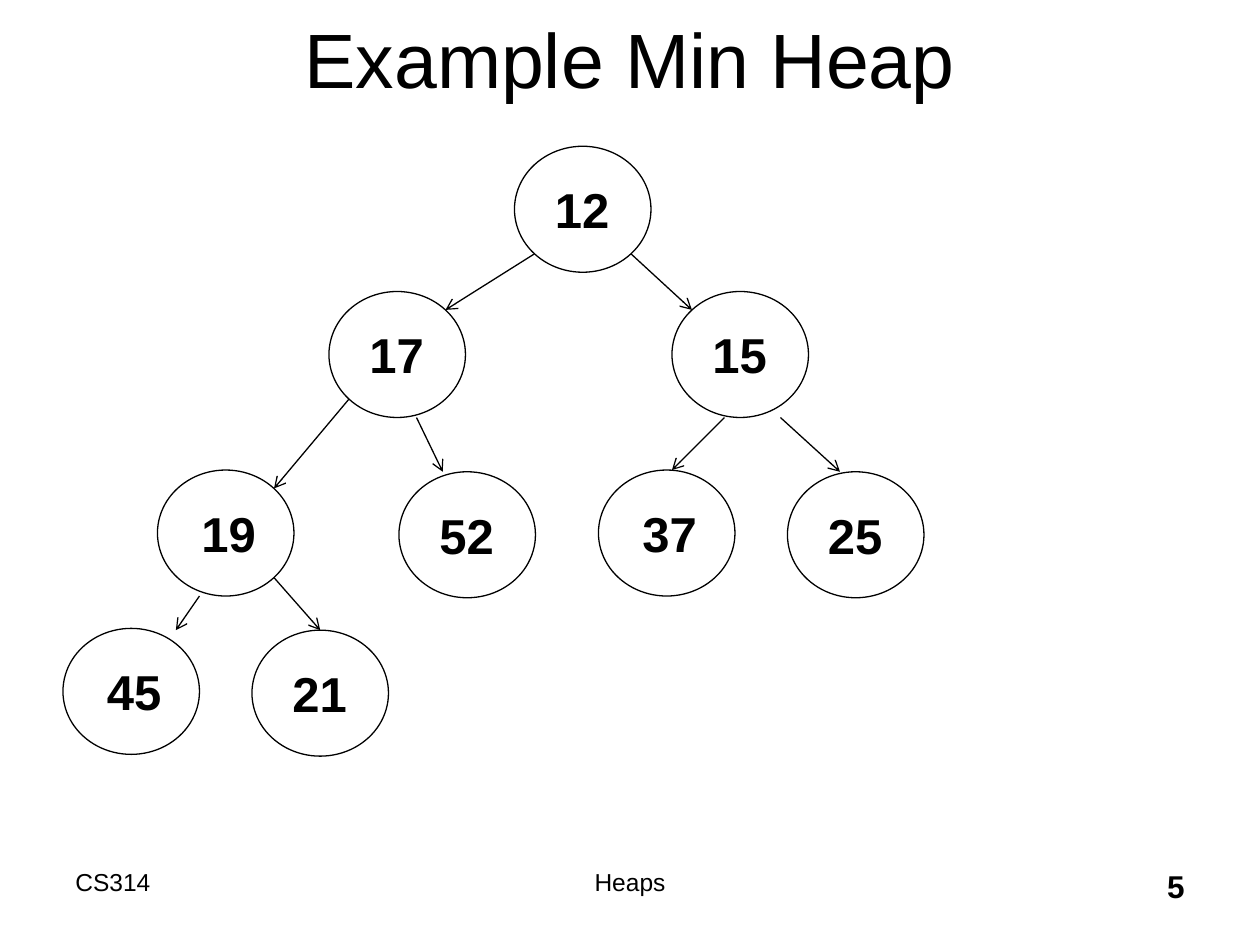
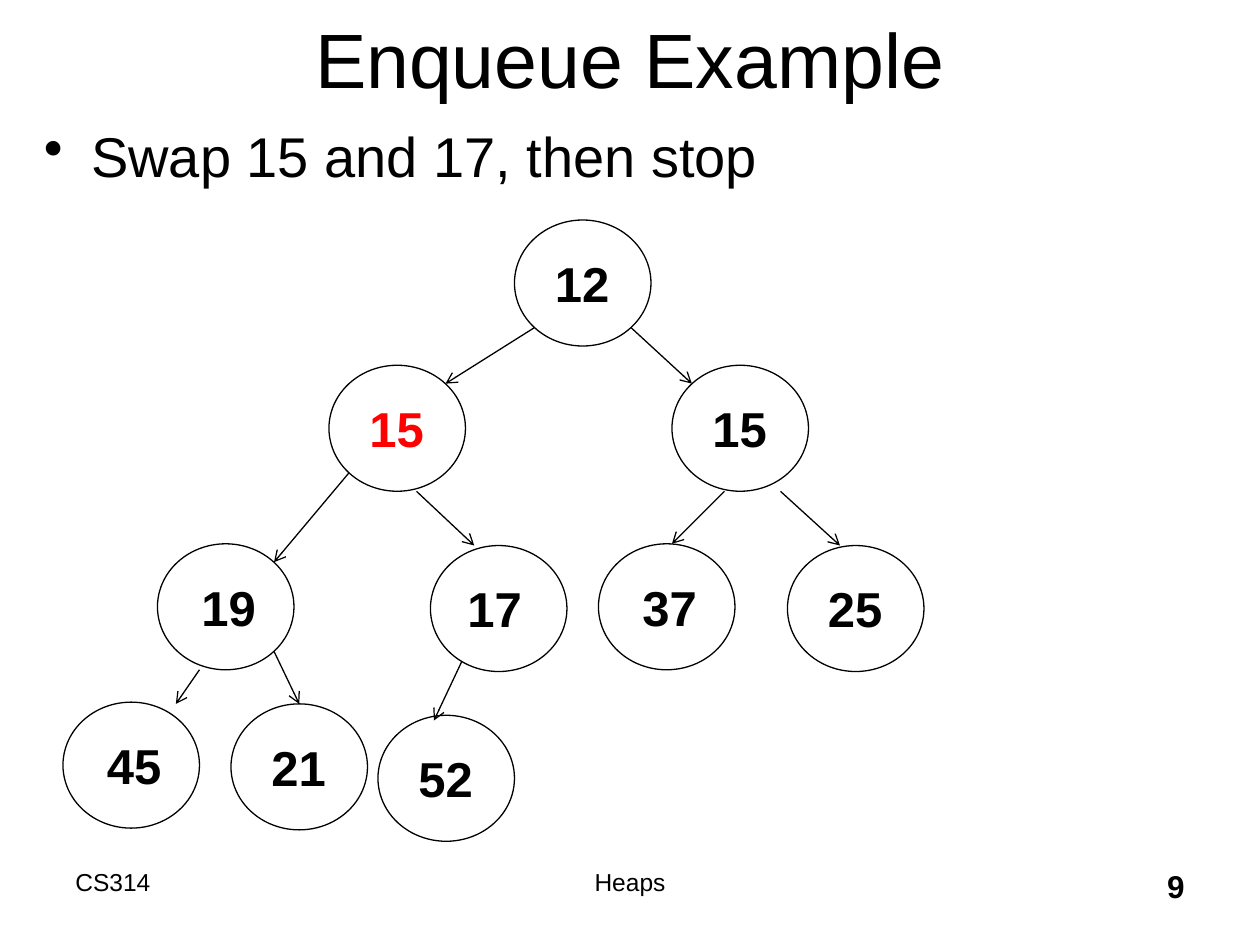
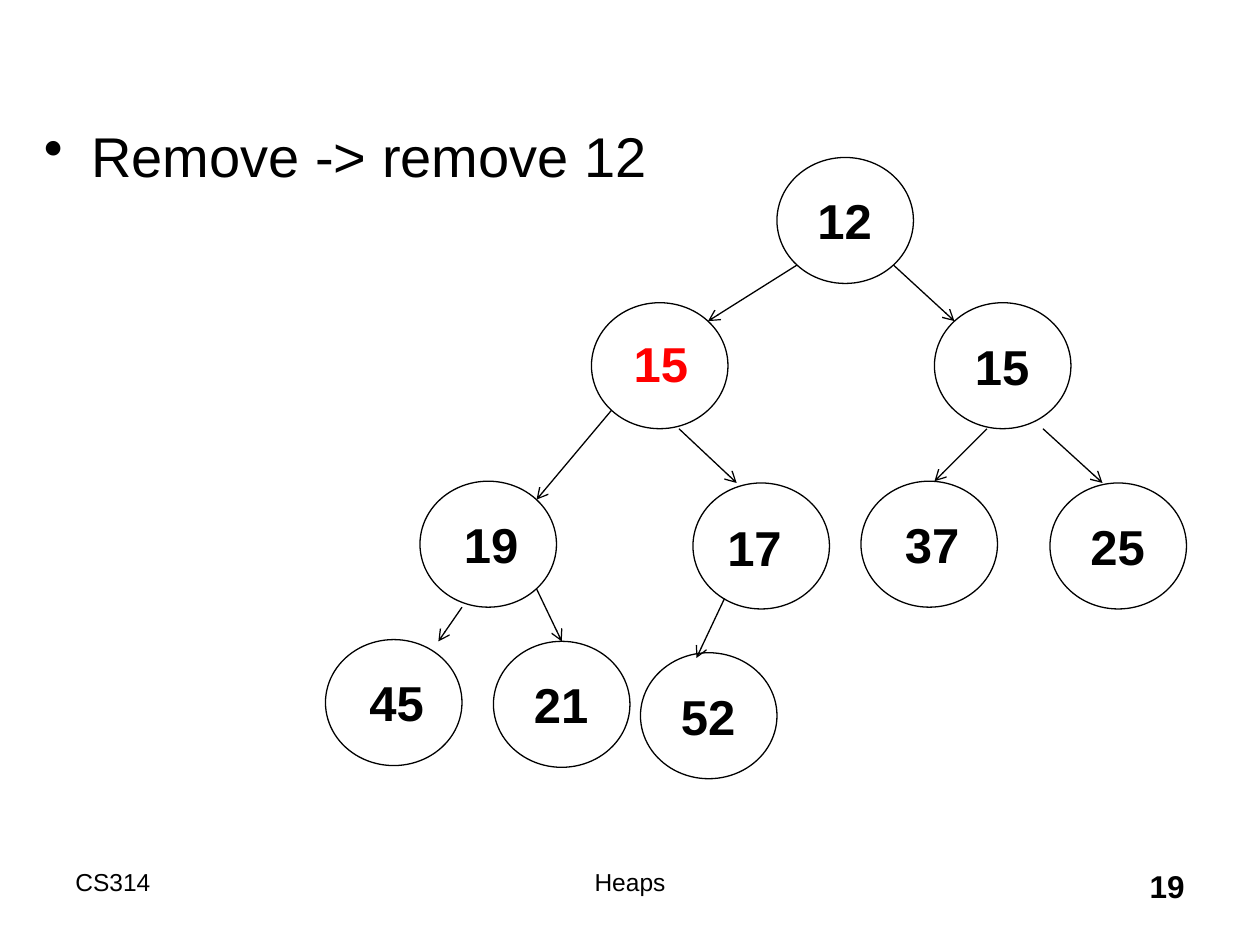
"""Build three slides that show a min heap, an enqueue and a removal."""
from dataclasses import dataclass

from lxml import etree
from pptx import Presentation
from pptx.dml.color import RGBColor
from pptx.enum.shapes import MSO_CONNECTOR, MSO_SHAPE
from pptx.enum.text import MSO_ANCHOR, PP_ALIGN
from pptx.oxml.ns import qn
from pptx.util import Pt

LEFT, MID, RIGHT = PP_ALIGN.LEFT, PP_ALIGN.CENTER, PP_ALIGN.RIGHT
TOP, CENTER = MSO_ANCHOR.TOP, MSO_ANCHOR.MIDDLE
OVAL, LINE = MSO_SHAPE.OVAL, MSO_CONNECTOR.STRAIGHT


@dataclass(frozen=True)
class Theme:
    font: str = "Arial"
    ink: RGBColor = RGBColor(0, 0, 0)
    mark: RGBColor = RGBColor(255, 0, 0)
    title: int = 44
    body: int = 32
    node: int = 28
    page: int = 18
    foot: int = 14
    rule: float = 0.75


theme = Theme()


def add_text(slide, text, area, size, align=LEFT, bold=False, color=theme.ink,
             anchor=TOP, wrap=True, before=0):
    box = slide.shapes.add_textbox(*map(Pt, area))
    frame = box.text_frame
    frame.word_wrap = wrap
    frame.vertical_anchor = anchor
    para = frame.paragraphs[0]
    para.text = text
    para.alignment = align
    para.space_before = Pt(before)
    para.font.name = theme.font
    para.font.size = Pt(size)
    para.font.bold = bold
    para.font.color.rgb = color
    return box


def add_edge(slide, start, end):
    edge = slide.shapes.add_connector(LINE, *map(Pt, start + end))
    edge.line.color.rgb = theme.ink
    edge.line.width = Pt(theme.rule)
    props = edge.element.spPr
    etree.SubElement(props.find(qn("a:ln")), qn("a:tailEnd"), type="arrow")
    etree.SubElement(props, qn("a:effectLst"))


WIDE, HIGH = 78, 72
LOW_L, LOW_R = (11.4, 61.5), (66.6, 61.5)
TOP_L, TOP_R = (11.4, 10.5), (66.6, 10.5)

small = [(0, 0), (-106, 83), (90, 83), (-204, 185), (-66, 186),
         (48, 185), (156, 186), (-258, 275.5), (-150, 276.5)]
large = small[:4] + [(-48, 186)] + small[5:8] + [(-162, 276.5), (-78, 283)]

ports = [(LOW_L, TOP_R), (LOW_R, TOP_L), (LOW_L, TOP_R),
         ((50, 72), (25, 0)), ((30, 72), (42, 0)), ((62, 72), (30, 0)),
         ((24, 72), (64.5, 1)), (LOW_R, (39, 0)), ((18, 66), (32, 3))]

inset = (16, 15.5)
shift = {3: (18, 15.5), 5: (18, 15.5), 7: (18, 15.5)}

start_heap = [12, 17, 15, 19, 52, 37, 25, 45, 21]
final_heap = [12, 15, 15, 19, 17, 37, 25, 45, 21, 52]

pages = [
    dict(title="Example Min Heap", body="", page=5, root=(294, 83.6),
         heap=start_heap, spots=small, red=None, shift=shift),
    dict(title="Enqueue Example", body="Swap 15 and 17, then stop", page=9,
         root=(294, 125.75), heap=final_heap, spots=large, red=1,
         shift={**shift, 4: (14, 15.5)}),
    dict(title="", body="Remove -> remove 12", page=19, root=(444, 90),
         heap=final_heap, spots=large, red=1,
         shift={**shift, 1: (17, 14), 4: (12.5, 16)}),
]

deck = Presentation()
deck.slide_width, deck.slide_height = Pt(720), Pt(540)

for page in pages:
    slide = deck.slides.add_slide(deck.slide_layouts[6])
    if page["title"]:
        add_text(slide, page["title"], (54, -12, 612, 90), theme.title, MID,
                 anchor=CENTER)
    if page["body"]:
        box = add_text(slide, page["body"], (18, 66, 684, 432), theme.body,
                       before=3.2)
        props = box.element.find(".//" + qn("a:pPr"))
        props.set("marL", str(Pt(27)))
        props.set("indent", str(Pt(-27)))
        bullet = etree.Element(qn("a:buChar"), char="•")
        props.find(qn("a:defRPr")).addprevious(bullet)
    add_text(slide, "CS314", (36, 492, 180, 36), theme.foot)
    add_text(slide, "Heaps", (222, 492, 276, 36), theme.foot, MID)
    add_text(slide, str(page["page"]), (534, 492, 150, 36), theme.page, RIGHT,
             bold=True)

    left, top = page["root"]
    spots = [(left + x, top + y) for x, y in page["spots"]]
    for index, (value, (x, y)) in enumerate(zip(page["heap"], spots)):
        node = slide.shapes.add_shape(OVAL, Pt(x), Pt(y), Pt(WIDE), Pt(HIGH))
        node.shadow.inherit = False
        node.fill.background()
        node.line.color.rgb = theme.ink
        node.line.width = Pt(theme.rule)
        dx, dy = page["shift"].get(index, inset)
        color = theme.mark if index == page["red"] else theme.ink
        add_text(slide, str(value), (x + dx, y + dy, 46, 41), theme.node,
                 bold=True, color=color, wrap=False, before=2.8)

    for child, (tail, head) in enumerate(ports[:len(spots) - 1], 1):
        (px, py), (cx, cy) = spots[(child - 1) // 2], spots[child]
        add_edge(slide, (px + tail[0], py + tail[1]),
                 (cx + head[0], cy + head[1]))

deck.save("out.pptx")
